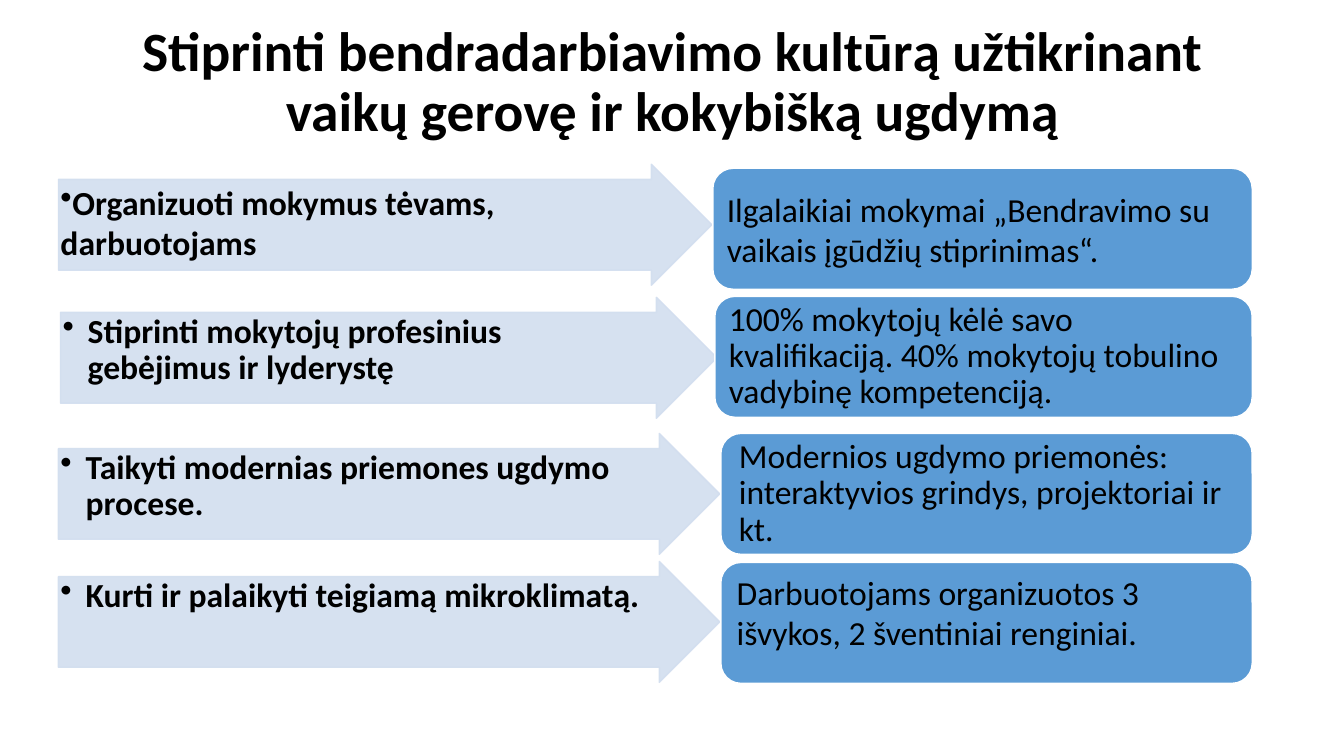
from dataclasses import dataclass

from lxml import etree
from pptx import Presentation
from pptx.dml.color import RGBColor
from pptx.enum.shapes import MSO_SHAPE
from pptx.enum.text import MSO_ANCHOR, MSO_AUTO_SIZE, PP_ALIGN
from pptx.oxml.ns import qn
from pptx.util import Inches, Pt

RIGHT_ARROW = MSO_SHAPE.RIGHT_ARROW
ROUNDED_BOX = MSO_SHAPE.ROUNDED_RECTANGLE
TOP, MIDDLE = MSO_ANCHOR.TOP, MSO_ANCHOR.MIDDLE
LEFT, CENTER = PP_ALIGN.LEFT, PP_ALIGN.CENTER
NO_AUTOFIT = MSO_AUTO_SIZE.NONE

BLACK = RGBColor(0x00, 0x00, 0x00)
WHITE = RGBColor(0xFF, 0xFF, 0xFF)
PALE_BLUE = RGBColor(0xD2, 0xDE, 0xEF)
BLUE = RGBColor(0x5B, 0x9B, 0xD5)

FONT = "Calibri"
ROW_HEIGHT = 1.2
RESULTS_RIGHT = 12.42
ARROW_OPACITY = 90


@dataclass
class Row:
    goal: str
    result: str
    arrow_box: tuple  # left, top, width
    result_corner: tuple  # left, top
    indent: float = 0.25
    goal_spacing: float = 0.9
    result_spacing: float = 0.9
    result_margins: tuple = (0.08, 0.04, 0.08, 0.04)


ROWS = [
    Row("Organizuoti mokymus tėvams, darbuotojams",
        "Ilgalaikiai mokymai „Bendravimo su vaikais įgūdžių stiprinimas“.",
        (0.58, 1.63, 6.48), (7.07, 1.67),
        indent=0, goal_spacing=1.0, result_spacing=1.0),
    Row("Stiprinti mokytojų profesinius gebėjimus ir lyderystę",
        "100% mokytojų kėlė savo kvalifikaciją. 40% mokytojų tobulino "
        "vadybinę kompetenciją.",
        (0.6, 2.95, 6.51), (7.09, 2.94)),
    Row("Taikyti modernias priemones ugdymo procese.",
        "Modernios ugdymo priemonės: interaktyvios grindys, projektoriai ir kt.",
        (0.58, 4.3, 6.56), (7.15, 4.3),
        result_margins=(0.12, 0.06, 0.12, 0.06)),
    Row("Kurti ir palaikyti teigiamą mikroklimatą.",
        "Darbuotojams organizuotos 3 išvykos, 2 šventiniai renginiai.",
        (0.58, 5.57, 6.56), (7.15, 5.58),
        result_spacing=1.0, result_margins=(0.1, 0.05, 0.1, 0.27)),
]


def apply_format(target, values):
    for name, value in values.items():
        setattr(target, name, value)


def write_text(shape, text, size, bold, alignment, spacing, anchor, margins):
    """Fill a shape with one formatted paragraph and return it."""
    left, top, right, bottom = (Inches(margin) for margin in margins)
    frame = shape.text_frame
    apply_format(frame, {
        "text": text, "word_wrap": True, "auto_size": NO_AUTOFIT,
        "vertical_anchor": anchor, "margin_left": left, "margin_top": top,
        "margin_right": right, "margin_bottom": bottom,
    })
    paragraph = frame.paragraphs[0]
    apply_format(paragraph, {"alignment": alignment, "line_spacing": spacing})
    font = paragraph.runs[0].font
    apply_format(font, {"name": FONT, "size": Pt(size), "bold": bold})
    font.color.rgb = BLACK
    return paragraph


def add_panel(slide, kind, box, fill, line):
    shape = slide.shapes.add_shape(kind, *(Inches(length) for length in box))
    shape.shadow.inherit = False
    shape.fill.solid()
    shape.fill.fore_color.rgb = fill
    shape.line.color.rgb = line
    shape.line.width = Pt(1)
    return shape


def set_opacity(shape, percent):
    for color in shape._element.spPr.iter(qn("a:srgbClr")):
        etree.SubElement(color, qn("a:alpha"), val=str(percent * 1000))


def set_bullet(paragraph, indent):
    properties = paragraph._p.get_or_add_pPr()
    properties.set("marL", str(Inches(indent)))
    properties.set("indent", str(-Inches(indent)))
    etree.SubElement(properties, qn("a:buChar"), char="•")


def add_title(slide, box, text):
    title = slide.shapes.title
    left, top, width, height = (Inches(length) for length in box)
    apply_format(title, {"left": left, "top": top,
                         "width": width, "height": height})
    write_text(title, text, 39.6, True, CENTER, 0.9, MIDDLE,
               (0.1, 0.05, 0.1, 0.05))


def add_goal(slide, box, row):
    """Pale arrow with a bulleted goal."""
    arrow = add_panel(slide, RIGHT_ARROW, box, PALE_BLUE, PALE_BLUE)
    arrow.adjustments[0] = 0.75
    arrow.adjustments[1] = 0.5
    set_opacity(arrow, ARROW_OPACITY)
    paragraph = write_text(arrow, row.goal, 24, True, LEFT, row.goal_spacing,
                           TOP, (0.02, 0.02, 0.32, 0.02))
    set_bullet(paragraph, row.indent)


def add_result(slide, box, row):
    """Blue rounded box with the result of the goal."""
    panel = add_panel(slide, ROUNDED_BOX, box, BLUE, WHITE)
    write_text(panel, row.result, 24, False, LEFT, row.result_spacing,
               MIDDLE, row.result_margins)


def main():
    presentation = Presentation()
    presentation.slide_width = Inches(13.33)
    presentation.slide_height = Inches(7.5)
    slide = presentation.slides.add_slide(presentation.slide_layouts[5])

    # Title
    add_title(slide, (0.92, 0.1, 11.5, 1.45),
              "Stiprinti bendradarbiavimo kultūrą užtikrinant "
              "vaikų gerovę ir kokybišką ugdymą")

    # Goals on the left, results on the right
    for row in ROWS:
        add_goal(slide, (*row.arrow_box, ROW_HEIGHT), row)
        left, top = row.result_corner
        add_result(slide, (left, top, RESULTS_RIGHT - left, ROW_HEIGHT), row)

    presentation.save("out.pptx")


if __name__ == "__main__":
    main()
